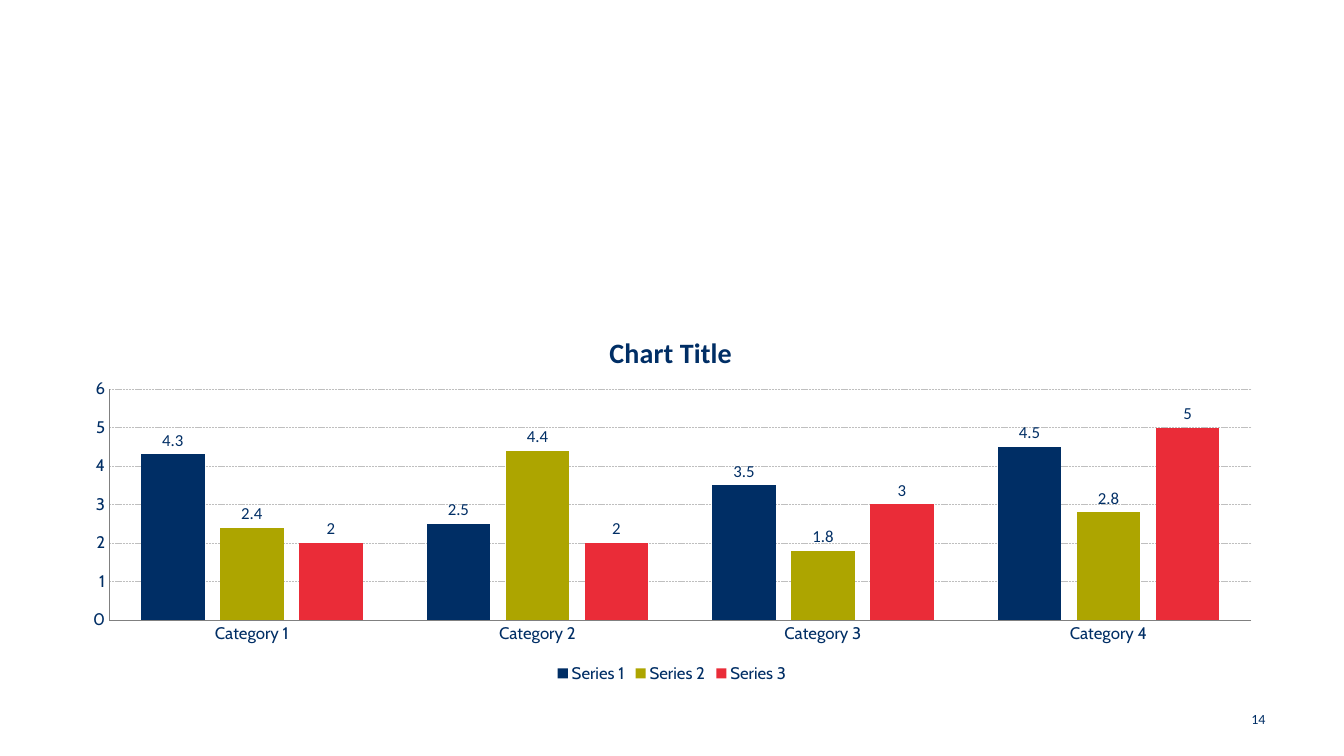
from dataclasses import dataclass

from lxml.etree import SubElement
from pptx import Presentation
from pptx.chart.axis import CategoryAxis, ValueAxis
from pptx.chart.chart import Chart
from pptx.chart.data import CategoryChartData
from pptx.dml.color import RGBColor
from pptx.enum.chart import (XL_CHART_TYPE, XL_LABEL_POSITION,
                             XL_LEGEND_POSITION, XL_TICK_MARK)
from pptx.enum.dml import MSO_LINE
from pptx.enum.text import MSO_ANCHOR, PP_ALIGN
from pptx.oxml.ns import qn
from pptx.slide import Slide
from pptx.text.text import Font
from pptx.util import Inches, Pt


@dataclass(frozen=True)
class Theme:
    navy: str = "002E65"
    olive: str = "ADA500"
    red: str = "EA2C38"
    axis: str = "808080"
    grid: str = "BFBFBF"
    chart_font: str = "Cabin"
    text_font: str = "Calibri"
    title_size: float = 20
    label_size: float = 12
    small_size: float = 10
    hairline: float = 0.5


@dataclass(frozen=True)
class Area:
    """Place and size in percent of the surrounding frame."""
    left: float
    top: float
    width: float = 0
    height: float = 0


@dataclass(frozen=True)
class Series:
    name: str
    values: tuple[float, ...]
    color: str


THEME = Theme()
SLIDE_WIDTH, SLIDE_HEIGHT = Inches(13.33), Inches(7.5)
CHART_AREA = Area(5.1, 40.27, 89.8, 50.67)
PAGE_NUMBER_AREA = Area(73.22, 92.4, 21.68, 5.33)
PLOT_AREA = Area(3.36, 22.1, 94.65, 60.3)
TITLE_AREA = Area(44.4, 6)

CATEGORIES = [f"Category {number}" for number in range(1, 5)]
SERIES = (
    Series("Series 1", (4.3, 2.5, 3.5, 4.5), THEME.navy),
    Series("Series 2", (2.4, 4.4, 1.8, 2.8), THEME.olive),
    Series("Series 3", (2, 2, 3, 5), THEME.red),
)


def on_slide(area: Area) -> tuple[int, int, int, int]:
    """Turn percentages into left, top, width and height on the slide."""
    return (int(SLIDE_WIDTH * area.left / 100), int(SLIDE_HEIGHT * area.top / 100),
            int(SLIDE_WIDTH * area.width / 100), int(SLIDE_HEIGHT * area.height / 100))


def set_font(font: Font, name: str, size: float, bold: bool = False) -> None:
    font.name, font.size, font.bold = name, Pt(size), bold
    font.color.rgb = RGBColor.from_string(THEME.navy)


def set_layout(parent, position: int, area: Area) -> None:
    """Fix a chart part at an area given in percent of the chart."""
    for old_layout in parent.findall(qn("c:layout")):
        parent.remove(old_layout)
    layout = SubElement(parent, qn("c:layout"))
    parent.insert(position, layout)
    manual = SubElement(layout, qn("c:manualLayout"))
    settings = {"xMode": "edge", "yMode": "edge",
                "x": area.left / 100, "y": area.top / 100}
    if area.width:
        settings = {"layoutTarget": "inner", **settings,
                    "w": area.width / 100, "h": area.height / 100}
    for tag, value in settings.items():
        SubElement(manual, qn(f"c:{tag}")).set("val", str(value))


def style_axis(axis: CategoryAxis | ValueAxis) -> None:
    axis.major_tick_mark = axis.minor_tick_mark = XL_TICK_MARK.NONE
    axis.format.line.color.rgb = RGBColor.from_string(THEME.axis)
    axis.format.line.width = Pt(THEME.hairline)
    set_font(axis.tick_labels.font, THEME.chart_font, THEME.label_size)


def style_value_axis(axis: ValueAxis) -> None:
    style_axis(axis)
    axis.minimum_scale, axis.maximum_scale, axis.major_unit = 0, 6, 1
    axis.has_major_gridlines = True
    gridline = axis.major_gridlines.format.line
    gridline.color.rgb = RGBColor.from_string(THEME.grid)
    gridline.width = Pt(THEME.hairline)
    gridline.dash_style = MSO_LINE.SQUARE_DOT


def style_columns(chart: Chart) -> None:
    plot = chart.plots[0]
    plot.gap_width, plot.overlap, plot.vary_by_categories = 100, -24, False
    for columns, series in zip(plot.series, SERIES):
        columns.format.fill.solid()
        columns.format.fill.fore_color.rgb = RGBColor.from_string(series.color)
        labels = columns.data_labels
        labels.show_value = True
        labels.position = XL_LABEL_POSITION.OUTSIDE_END
        set_font(labels.font, THEME.text_font, THEME.label_size)


def add_column_chart(slide: Slide) -> None:
    chart_data = CategoryChartData()
    chart_data.categories = CATEGORIES
    for series in SERIES:
        chart_data.add_series(series.name, series.values)
    chart = slide.shapes.add_chart(
        XL_CHART_TYPE.COLUMN_CLUSTERED, *on_slide(CHART_AREA), chart_data).chart
    set_font(chart.font, THEME.chart_font, THEME.small_size)

    chart.has_title = True
    heading = chart.chart_title.text_frame
    heading.text = "Chart Title"
    set_font(heading.paragraphs[0].runs[0].font, THEME.text_font,
             THEME.title_size, bold=True)
    chart.chart_title.include_in_layout = False
    set_layout(chart.chart_title.element, 1, TITLE_AREA)
    set_layout(chart.element.chart.plotArea, 0, PLOT_AREA)

    chart.has_legend = True
    chart.legend.position = XL_LEGEND_POSITION.BOTTOM
    chart.legend.include_in_layout = False
    set_font(chart.legend.font, THEME.chart_font, THEME.label_size)

    style_axis(chart.category_axis)
    style_value_axis(chart.value_axis)
    style_columns(chart)


def add_page_number(slide: Slide) -> None:
    frame = slide.shapes.add_textbox(*on_slide(PAGE_NUMBER_AREA)).text_frame
    frame.word_wrap = True
    frame.vertical_anchor = MSO_ANCHOR.MIDDLE
    frame.text = "14"
    number = frame.paragraphs[0]
    number.alignment = PP_ALIGN.RIGHT
    set_font(number.runs[0].font, THEME.text_font, THEME.small_size)


def main() -> None:
    presentation = Presentation()
    presentation.slide_width, presentation.slide_height = SLIDE_WIDTH, SLIDE_HEIGHT
    blank_layout = presentation.slide_layouts[6]
    slide = presentation.slides.add_slide(blank_layout)
    add_page_number(slide)
    add_column_chart(slide)
    presentation.save("out.pptx")


if __name__ == "__main__":
    main()
